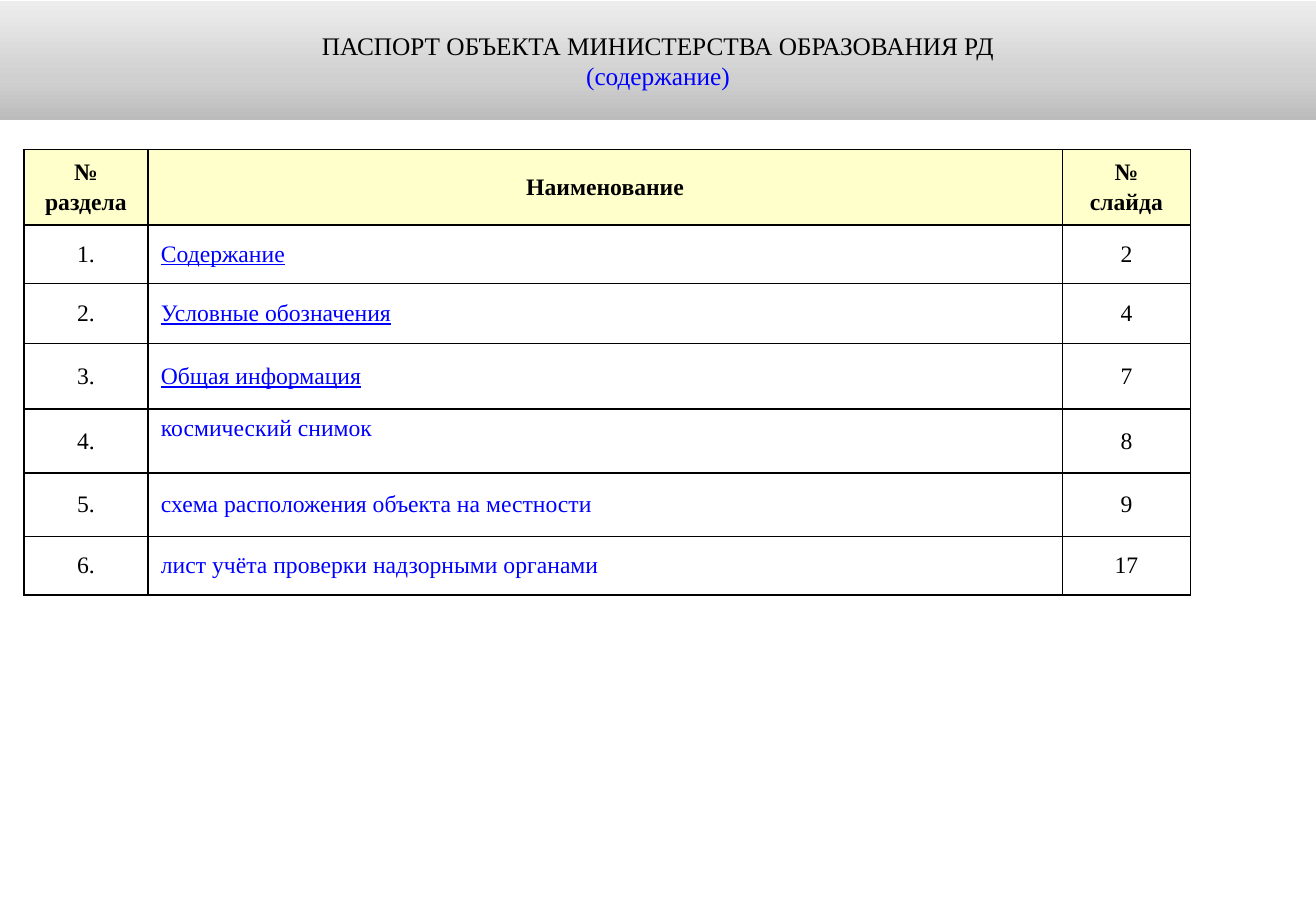
from copy import deepcopy

from pptx import Presentation
from pptx.dml.color import RGBColor
from pptx.enum.shapes import MSO_SHAPE
from pptx.enum.text import MSO_ANCHOR, PP_ALIGN
from pptx.oxml import parse_xml
from pptx.oxml.ns import nsdecls, qn
from pptx.util import Pt

RECTANGLE = MSO_SHAPE.RECTANGLE
TOP, MIDDLE = MSO_ANCHOR.TOP, MSO_ANCHOR.MIDDLE
LEFT, CENTER = PP_ALIGN.LEFT, PP_ALIGN.CENTER

FONT = "Times New Roman"
BLACK, BLUE, WHITE, CREAM = "000000", "0000FF", "FFFFFF", "FFFFCC"
BANNER_STOPS = [(0, "BCBCBC"), (0.35, "D0D0D0"), (1, "EDEDED")]

COLUMN_WIDTHS = [73.5, 542, 76]
ROW_HEIGHTS = [44.7, 34.7, 35.5, 39.1, 37.9, 37.6, 34.7]
HEADINGS = [["№", "раздела"], ["Наименование"], ["№", "слайда"]]
# Section name, slide number, underlined, vertical anchor
SECTIONS = [
    ("Содержание", 2, True, MIDDLE),
    ("Условные обозначения", 4, True, MIDDLE),
    ("Общая информация", 7, True, MIDDLE),
    ("космический снимок", 8, False, TOP),
    ("схема расположения объекта на местности", 9, False, MIDDLE),
    ("лист учёта проверки надзорными органами", 17, False, MIDDLE),
]


def rgb(color):
    return RGBColor.from_string(color)


def write(frame, lines, colors=(BLACK,), size=14, bold=False,
          underline=False, align=CENTER, gap=0):
    """Write one paragraph per line; the last colour serves all further lines."""
    frame.word_wrap = True
    for index, line in enumerate(lines):
        paragraph = frame.add_paragraph() if index else frame.paragraphs[0]
        paragraph.alignment = align
        paragraph.space_before = Pt(gap if index else 0)
        run = paragraph.add_run()
        run.text = line
        run.font.name = FONT
        run.font.size = Pt(size)
        run.font.bold = bold
        run.font.underline = underline
        run.font.color.rgb = rgb(colors[min(index, len(colors) - 1)])


def add_banner(slide, left, top, width, height):
    banner = slide.shapes.add_shape(RECTANGLE, Pt(left), Pt(top), Pt(width), Pt(height))
    banner.shadow.inherit = False
    banner.line.fill.background()
    banner.fill.gradient()
    banner.fill.gradient_angle = 90
    stops = banner._element.spPr.find(".//" + qn("a:gsLst"))
    stops.append(deepcopy(stops[0]))
    for stop, (position, color) in zip(banner.fill.gradient_stops, BANNER_STOPS):
        stop.position = position
        stop.color.rgb = rgb(color)
    banner.text_frame.vertical_anchor = MIDDLE
    write(banner.text_frame,
          ["ПАСПОРТ ОБЪЕКТА МИНИСТЕРСТВА ОБРАЗОВАНИЯ РД", "(содержание)"],
          colors=(BLACK, BLUE), size=15)


def add_borders(cell, color=BLACK, width=1):
    properties = cell._tc.get_or_add_tcPr()
    for position, side in enumerate(("lnL", "lnR", "lnT", "lnB")):
        properties.insert(position, parse_xml(
            f'<a:{side} {nsdecls("a")} w="{Pt(width)}"><a:solidFill>'
            f'<a:srgbClr val="{color}"/></a:solidFill></a:{side}>'))


def fill_cell(cell, lines, background=WHITE, anchor=MIDDLE, **text_format):
    cell.fill.solid()
    cell.fill.fore_color.rgb = rgb(background)
    cell.vertical_anchor = anchor
    cell.margin_left = cell.margin_right = Pt(7.7)
    cell.margin_top = cell.margin_bottom = Pt(3.6)
    add_borders(cell)
    write(cell.text_frame, lines, **text_format)


def add_contents(slide, left, top):
    table = slide.shapes.add_table(
        len(ROW_HEIGHTS), len(COLUMN_WIDTHS), Pt(left), Pt(top),
        Pt(sum(COLUMN_WIDTHS)), Pt(sum(ROW_HEIGHTS))).table
    for column, width in zip(table.columns, COLUMN_WIDTHS):
        column.width = Pt(width)
    for row, height in zip(table.rows, ROW_HEIGHTS):
        row.height = Pt(height)
    for column, heading in enumerate(HEADINGS):
        fill_cell(table.cell(0, column), heading, background=CREAM, bold=True, gap=2.5)
    for number, (name, page, underline, anchor) in enumerate(SECTIONS, 1):
        fill_cell(table.cell(number, 0), [f"{number}."])
        fill_cell(table.cell(number, 1), [name], anchor=anchor, colors=(BLUE,),
                  underline=underline, align=LEFT)
        fill_cell(table.cell(number, 2), [str(page)])


def main():
    presentation = Presentation()
    presentation.slide_width, presentation.slide_height = Pt(780), Pt(540)
    slide = presentation.slides.add_slide(presentation.slide_layouts[6])
    add_banner(slide, 0, 0.7, 780, 70.5)
    add_contents(slide, 14.2, 88.6)
    presentation.save("out.pptx")


if __name__ == "__main__":
    main()
